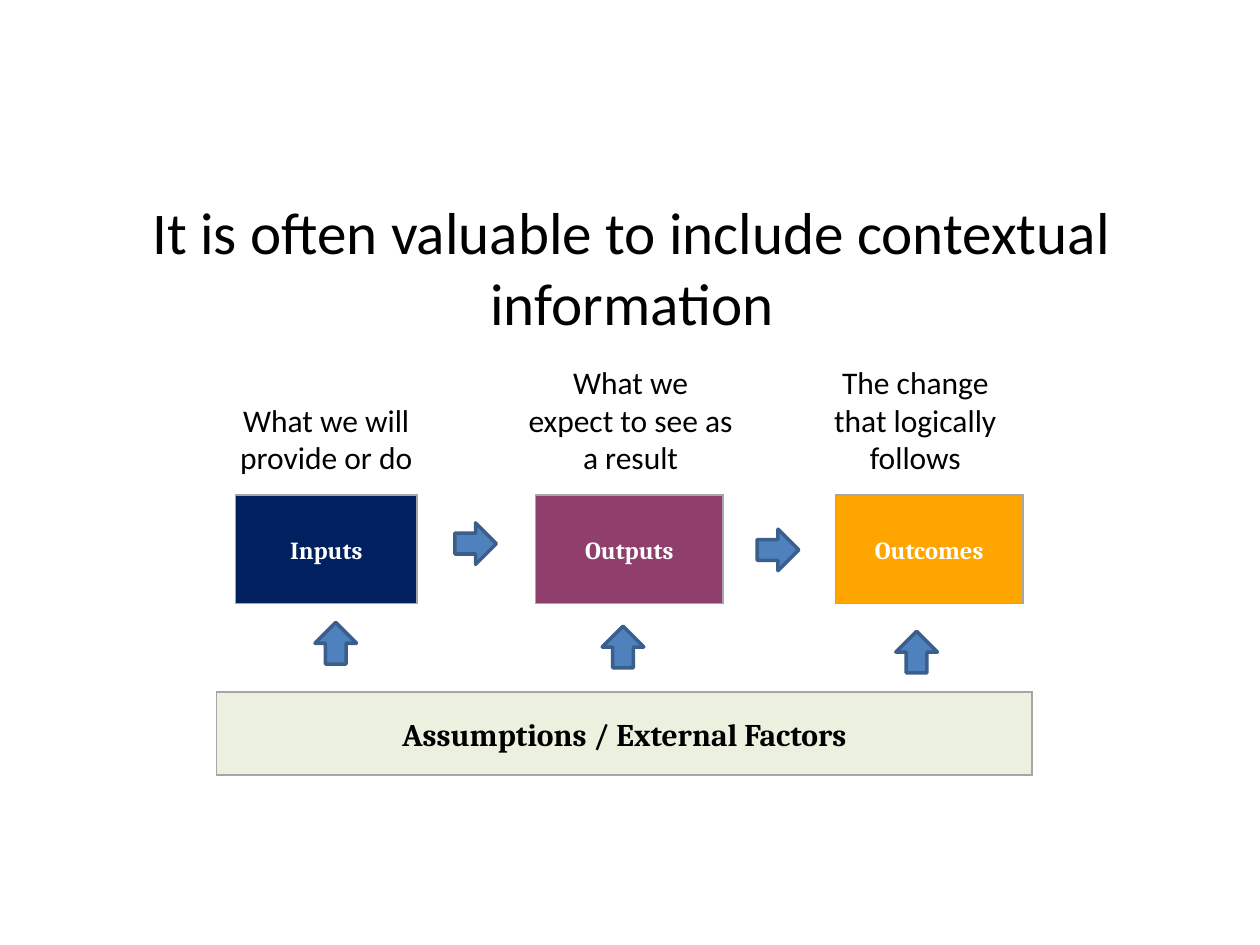
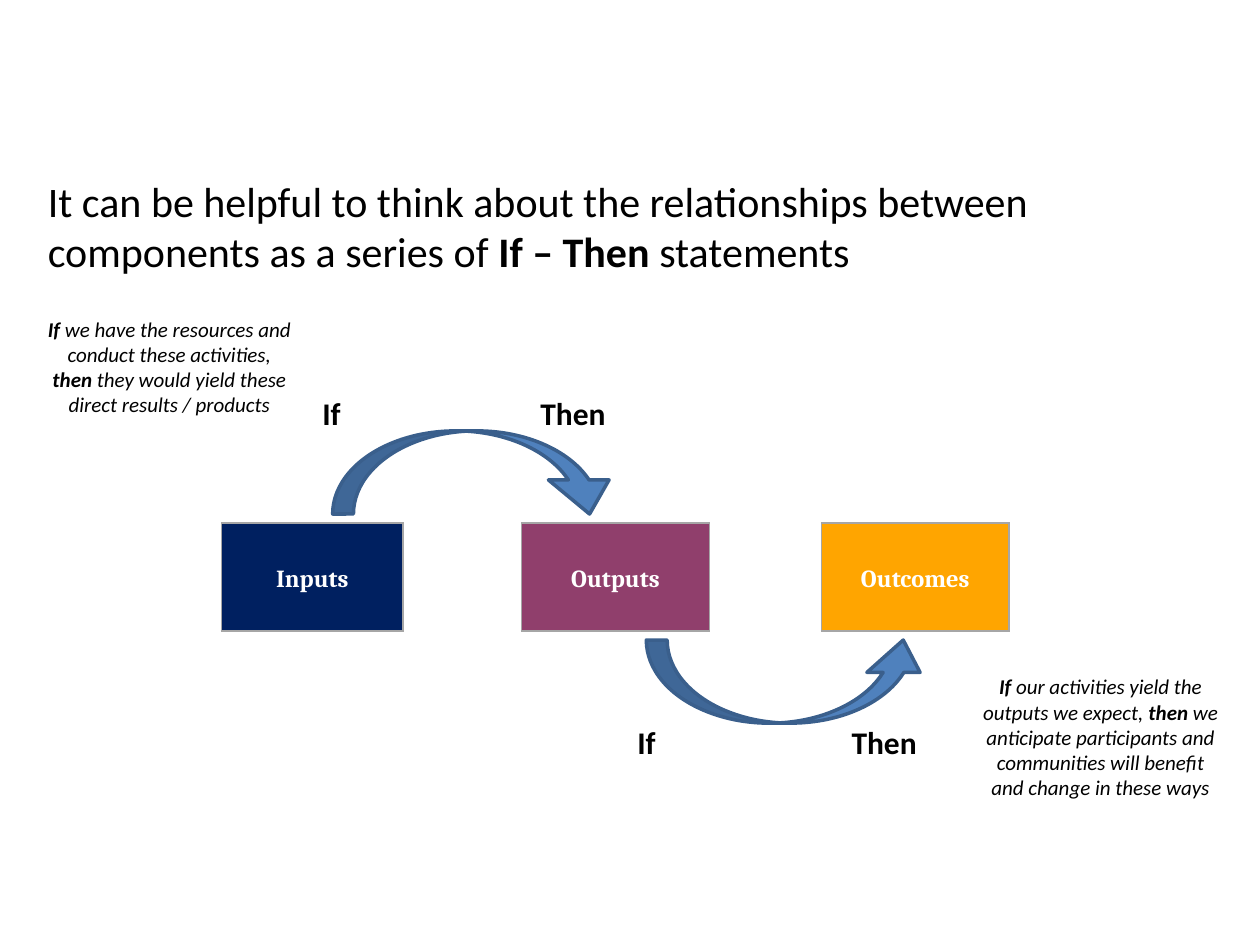
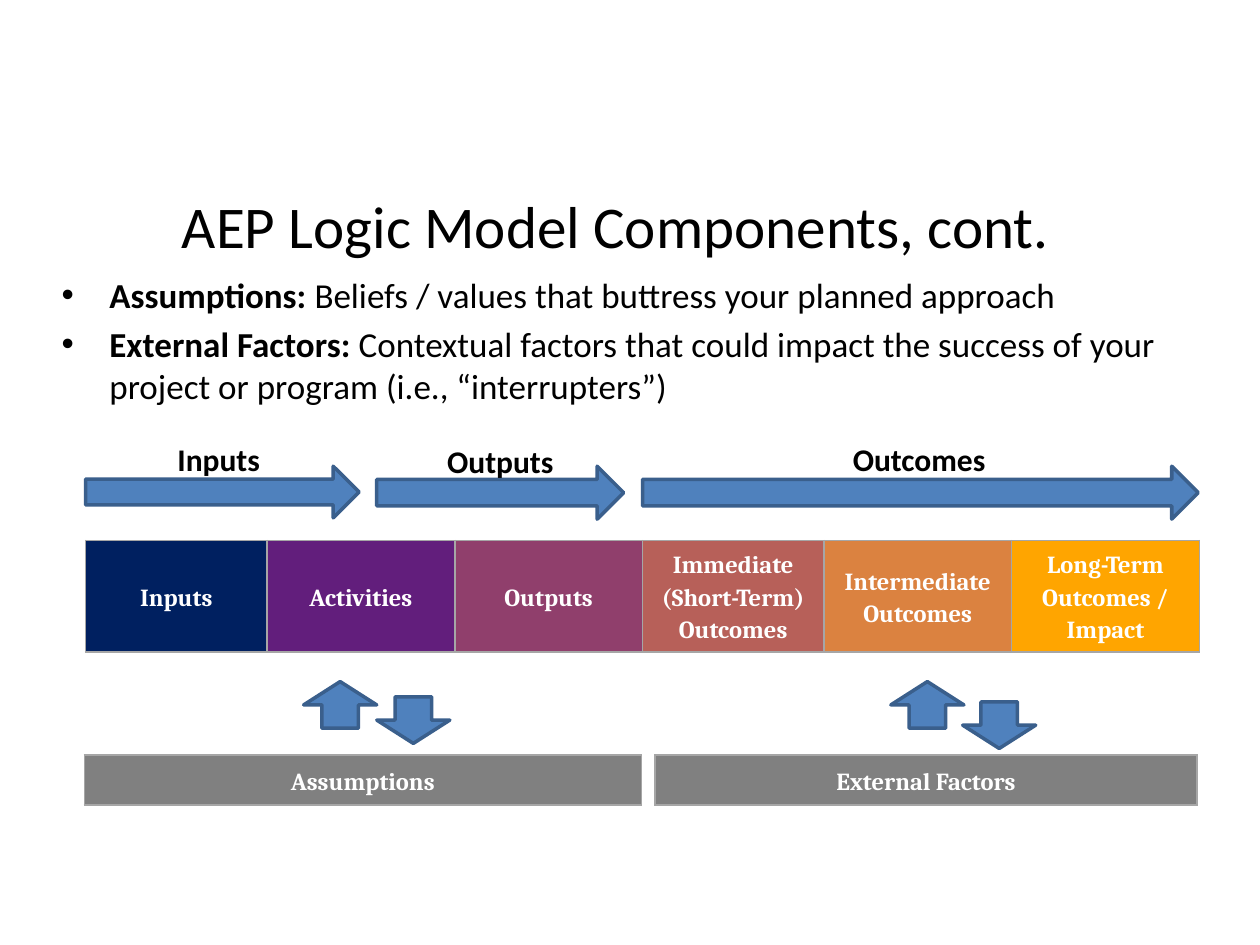
import pptx
import pptx.dml.color
import pptx.enum.shapes
import pptx.enum.text
import pptx.oxml
import pptx.oxml.ns
import pptx.util

Inches = pptx.util.Inches
Pt = pptx.util.Pt
Shapes = pptx.enum.shapes.MSO_SHAPE
Align = pptx.enum.text.PP_ALIGN
Anchor = pptx.enum.text.MSO_ANCHOR
AutoSize = pptx.enum.text.MSO_AUTO_SIZE

COLORS = {
    "black": "000000",
    "white": "FFFFFF",
    "inputs": "002060",
    "activities": "621E7C",
    "outputs": "903F6C",
    "immediate": "B76059",
    "intermediate": "DB8240",
    "outcomes": "FFA500",
    "context": "EBF1DE",
    "gray": "808080",
    "border": "A6A6A6",
    "arrow": "4F81BD",
    "arrow_line": "3A5F8C",
}
BODY_FONT = "Calibri"
TABLE_FONT = "Cambria"
TITLE_SIZE = 33.8
STAGES = [("Inputs", "inputs", 1.44), ("Outputs", "outputs", 1.49), ("Outcomes", "outcomes", 1.49)]
STAGE_STEP = 2.38
STAGE_HEIGHT = 0.86


def rgb(name):
    return pptx.dml.color.RGBColor.from_string(COLORS[name])


def box(left, top, width, height):
    return [Inches(value) for value in (left, top, width, height)]


def write_runs(paragraph, pieces, size, color="black", font_name=BODY_FONT, italic=False):
    for text, bold in pieces:
        run = paragraph.add_run()
        run.text = text
        run.font.name = font_name
        run.font.size = Pt(size)
        run.font.bold = bold
        run.font.italic = italic
        run.font.color.rgb = rgb(color)


def add_titled_slide(presentation, place, pieces, size=TITLE_SIZE, alignment=Align.CENTER):
    slide = presentation.slides.add_slide(presentation.slide_layouts[5])
    title = slide.shapes.title
    title.left, title.top, title.width, title.height = box(*place)
    frame = title.text_frame
    frame.word_wrap = True
    frame.auto_size = AutoSize.NONE
    frame.vertical_anchor = Anchor.TOP
    frame.paragraphs[0].alignment = alignment
    write_runs(frame.paragraphs[0], pieces, size)
    return slide


def add_note(slide, place, pieces, size=18, italic=False):
    frame = slide.shapes.add_textbox(*box(*place)).text_frame
    frame.word_wrap = True
    frame.auto_size = AutoSize.SHAPE_TO_FIT_TEXT
    frame.paragraphs[0].alignment = Align.CENTER
    write_runs(frame.paragraphs[0], pieces, size, italic=italic)


def add_label(slide, left, top, width, text):
    frame = slide.shapes.add_textbox(*box(left, top, width, 0.4)).text_frame
    frame.word_wrap = False
    frame.auto_size = AutoSize.SHAPE_TO_FIT_TEXT
    write_runs(frame.paragraphs[0], [(text, True)], 18)


def add_bullets(slide, place, items):
    frame = slide.shapes.add_textbox(*box(*place)).text_frame
    frame.word_wrap = True
    for index, pieces in enumerate(items):
        paragraph = frame.add_paragraph() if index else frame.paragraphs[0]
        properties = paragraph._p.get_or_add_pPr()
        properties.set("marL", str(Inches(0.38)))
        properties.set("indent", str(-Inches(0.38)))
        if index:
            paragraph.space_before = Pt(4)
        for tag, attribute, value in (("buFont", "typeface", "Arial"), ("buChar", "char", "•")):
            bullet = pptx.oxml.parse_xml(
                f'<a:{tag} {pptx.oxml.ns.nsdecls("a")} {attribute}="{value}"/>'
            )
            properties.append(bullet)
        write_runs(paragraph, pieces, 20)


def add_arrow(slide, kind, place, rotation=0, adjustments=()):
    arrow = slide.shapes.add_shape(kind, *box(*place))
    arrow.shadow.inherit = False
    arrow.rotation = rotation
    arrow.fill.solid()
    arrow.fill.fore_color.rgb = rgb("arrow")
    arrow.line.color.rgb = rgb("arrow_line")
    arrow.line.width = Pt(2)
    for index, value in enumerate(adjustments):
        arrow.adjustments[index] = value


def set_borders(cell):
    properties = cell._tc.get_or_add_tcPr()
    for side in "LRTB":
        properties.append(pptx.oxml.parse_xml(
            f'<a:ln{side} {pptx.oxml.ns.nsdecls("a")} w="12700"><a:solidFill>'
            f'<a:srgbClr val="{COLORS["border"]}"/></a:solidFill></a:ln{side}>'
        ))


def add_boxes(slide, left, top, height, items, size=14, color="white"):
    width = sum(item[2] for item in items)
    table = slide.shapes.add_table(1, len(items), *box(left, top, width, height)).table
    table.first_row = False
    table.horz_banding = False
    for index, (text, fill, column_width) in enumerate(items):
        table.columns[index].width = Inches(column_width)
        cell = table.cell(0, index)
        set_borders(cell)
        cell.fill.solid()
        cell.fill.fore_color.rgb = rgb(fill)
        cell.vertical_anchor = Anchor.MIDDLE
        cell.margin_left = cell.margin_right = Inches(0.04)
        cell.margin_top = cell.margin_bottom = Inches(0.04)
        paragraph = cell.text_frame.paragraphs[0]
        paragraph.alignment = Align.CENTER
        paragraph.line_spacing = 1.15
        write_runs(paragraph, [(text, True)], size, color, TABLE_FONT)


def add_stages(slide, left, top):
    for index, stage in enumerate(STAGES):
        add_boxes(slide, left + index * STAGE_STEP, top, STAGE_HEIGHT, [stage])


def build_context_slide(presentation):
    slide = add_titled_slide(
        presentation, (0.32, 1.5, 9.39, 0.66),
        [("It is often valuable to include contextual information", False)],
    )
    add_stages(slide, 1.87, 3.93)
    for place, text in (
        ((1.42, 3.13, 2.34, 0.71), "What we will provide or do"),
        ((4.09, 2.83, 1.83, 1.01), "What we expect to see as a result"),
        ((6.35, 2.83, 1.83, 1.01), "The change that logically follows"),
    ):
        add_note(slide, place, [(text, False)])
    add_boxes(slide, 1.72, 5.49, 0.66,
              [("Assumptions / External Factors", "context", 6.47)], 18, "black")
    for left, top, rotation in (
        (3.61, 4.15, 0), (6.01, 4.2, 0), (2.5, 4.94, 270), (4.78, 4.97, 270), (7.11, 5.01, 270),
    ):
        add_arrow(slide, Shapes.RIGHT_ARROW, (left, top, 0.33, 0.33), rotation)


def build_if_then_slide(presentation):
    slide = add_titled_slide(
        presentation, (0.28, 1.34, 9.22, 0.66),
        [
            ("It can be helpful to think about the relationships between components as a series of ", False),
            ("If – Then ", True),
            ("statements", False),
        ],
        24, Align.LEFT,
    )
    add_arrow(slide, Shapes.CURVED_DOWN_ARROW, (2.64, 3.42, 2.28, 0.66), 0, (0.25, 0.73, 0.41))
    add_arrow(slide, Shapes.CURVED_UP_ARROW, (5.13, 5.08, 2.25, 0.66), 0, (0.25, 0.64, 0.39))
    for if_left, then_left, top in ((2.46, 4.19, 3.08), (4.96, 6.66, 5.69)):
        add_label(slide, if_left, top, 0.35, "If")
        add_label(slide, then_left, top, 0.72, "Then")
    add_stages(slide, 1.76, 4.15)
    for place, condition, result in (
        ((0.28, 2.46, 2.13, 0.91),
         " we have the resources and conduct these activities, ",
         " they would yield these direct results / products"),
        ((7.67, 5.3, 2.13, 1.11),
         " our activities yield the outputs we expect, ",
         " we anticipate participants and communities will benefit and change in these ways"),
    ):
        pieces = [("If", True), (condition, False), ("then", True), (result, False)]
        add_note(slide, place, pieces, 12, True)


def build_components_slide(presentation):
    slide = add_titled_slide(
        presentation, (0.28, 1.45, 9.22, 0.67),
        [("AEP Logic Model Components, cont.", False)],
    )
    add_bullets(slide, (0.39, 2.12, 9.22, 4.5), [
        [("Assumptions: ", True),
         ("Beliefs / values that buttress your planned approach", False)],
        [("External Factors: ", True),
         ("Contextual factors that could impact the success of your project or program "
          "(i.e., “interrupters”)", False)],
    ])
    add_boxes(slide, 0.68, 4.29, STAGE_HEIGHT, [
        ("Inputs", "inputs", 1.44),
        ("Activities", "activities", 1.49),
        ("Outputs", "outputs", 1.49),
        ("Immediate (Short-Term) Outcomes", "immediate", 1.44),
        ("Intermediate Outcomes", "intermediate", 1.49),
        ("Long-Term Outcomes / Impact", "outcomes", 1.49),
    ])
    for arrow_place, label_place, text in (
        ((0.68, 3.7, 2.17, 0.41), (1.31, 3.44, 0.86), "Inputs"),
        ((5.1, 3.7, 4.41, 0.42), (6.67, 3.44, 1.26), "Outcomes"),
        ((2.99, 3.7, 1.96, 0.42), (3.45, 3.46, 1.05), "Outputs"),
    ):
        add_arrow(slide, Shapes.RIGHT_ARROW, arrow_place)
        add_label(slide, *label_place, text)
    add_boxes(slide, 5.2, 5.99, 0.4, [("External Factors", "gray", 4.3)])
    add_boxes(slide, 0.67, 5.99, 0.4, [("Assumptions", "gray", 4.42)])
    for left, top, rotation in (
        (2.41, 5.41, 0), (7.07, 5.41, 0), (7.64, 5.57, 180), (2.99, 5.53, 180),
    ):
        add_arrow(slide, Shapes.UP_ARROW, (left, top, 0.58, 0.37), rotation)


def main():
    presentation = pptx.Presentation()
    presentation.slide_width = Inches(10)
    presentation.slide_height = Inches(7.5)
    build_context_slide(presentation)
    build_if_then_slide(presentation)
    build_components_slide(presentation)
    presentation.save("out.pptx")


if __name__ == "__main__":
    main()
